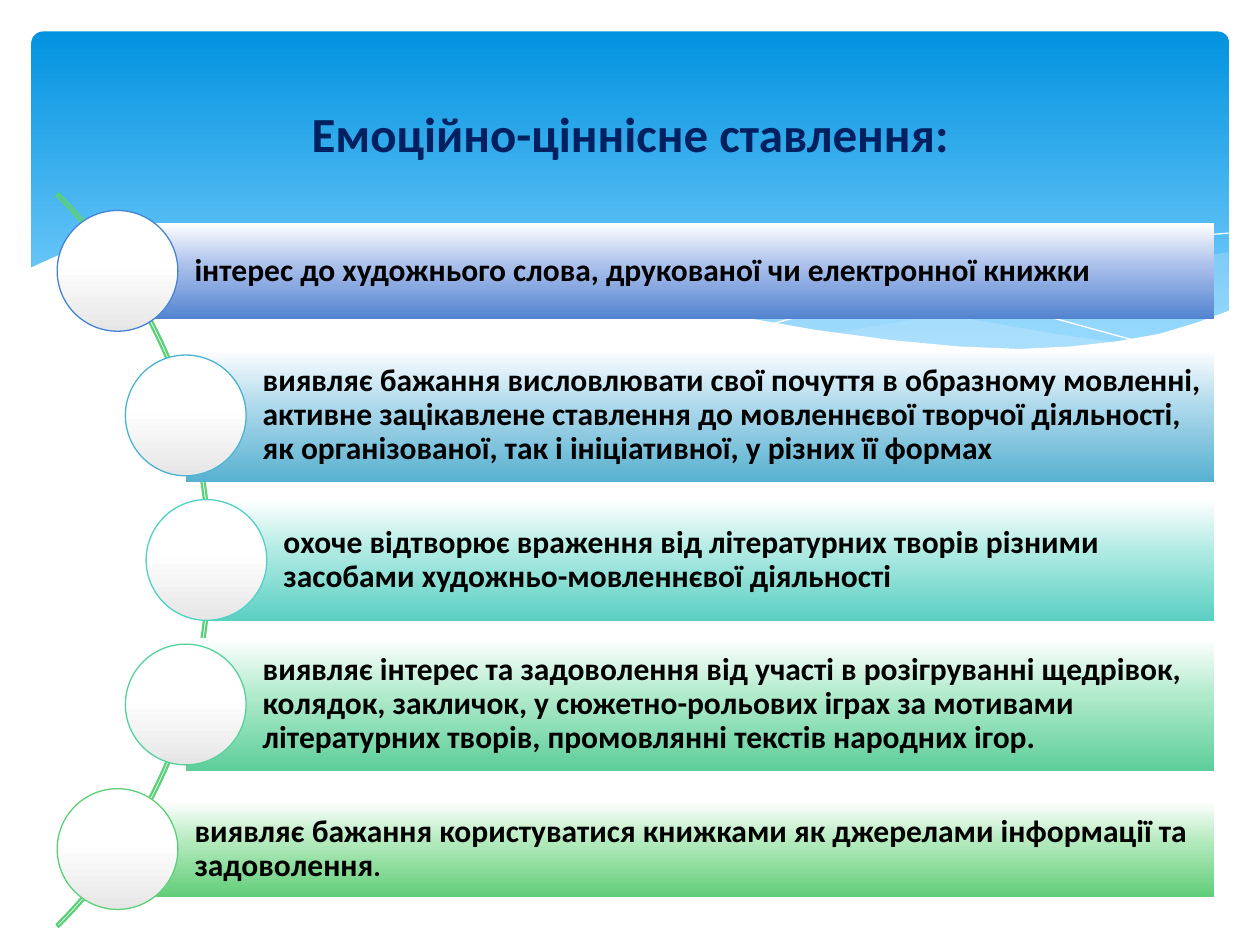
from dataclasses import dataclass
from math import sqrt
from typing import Optional

from lxml.etree import SubElement
from pptx import Presentation
from pptx.dml.color import RGBColor
from pptx.enum.shapes import MSO_SHAPE
from pptx.enum.text import MSO_ANCHOR, PP_ALIGN
from pptx.oxml import parse_xml
from pptx.oxml.ns import nsdecls, qn
from pptx.util import Pt

COLORS = {
    "white": "FFFFFF", "black": "000000", "title": "002060", "wave": "C6E7FC",
    "sky_top": "0293E0", "sky_bottom": "83D3FE", "circle_bottom": "E6E6E6", "arc": "5BD078",
}
FONT = "Calibri"
ARC_X, ARC_Y, ARC_R = -176, 320, 294
STEP, CIRCLE, BAR_RIGHT = 82.6, 69, 694


@dataclass
class Wave:
    points: list
    fill: Optional[str] = None
    opacity: int = 100


@dataclass
class Item:
    text: str
    height: float
    middle: str
    bottom: str
    outline: str
    ending: str = ""


WAVES = [
    Wave([(702, 144), (673, 149), (631, 155.5), (579.6, 170.6), (525, 182), (476, 190.8),
          (507.6, 195), (545, 198.7), (578, 200), (615, 198.7), (646, 194.4), (673, 188.6),
          (702.5, 177.8)], "wave", 29),
    Wave([(643, 196.6), (602.6, 190.8), (558, 183), (508, 172.8), (453, 160), (420.5, 152),
          (380, 144), (335, 137.5), (287, 134), (247.7, 134), (206, 137.5), (246, 143.3),
          (291, 152), (323, 160), (381.6, 172.8), (432.7, 183.6), (479, 191.5), (520, 197),
          (565, 200), (603, 200)], "wave", 40),
    Wave([(222.5, 140.4), (247.7, 136.8), (278.6, 134.6), (311.8, 134.6), (352, 136.8),
          (400, 141.8), (458, 149.8), (500, 157.7), (547, 167.8), (598, 180.7), (653, 195.8)]),
    Wave([(441.4, 185), (483.8, 173.5), (538.6, 160.6), (580, 151), (623.5, 143.3),
          (655, 138), (684.7, 134.6), (702, 133.2)]),
    Wave([(703.4, 177.1), (684, 184.3), (662.4, 190.8), (638.6, 195), (612, 198),
          (582.5, 199.4), (548, 198), (509.8, 194.4), (466.6, 188.6), (417, 180),
          (362, 167.8), (321.8, 158.4), (281.5, 149), (244.8, 141.8), (210, 136.8),
          (180, 134), (139, 132.5), (105, 133.2), (76.3, 136), (54.7, 140.4), (33, 146),
          (16.6, 153.4), (16.6, 236.9), (703.4, 236.9)], "white"),
]

ITEMS = [
    Item("інтерес до художнього слова, друкованої чи електронної книжки",
         54.7, "ABC0EB", "5484D1", "4584D3"),
    Item("виявляє бажання висловлювати свої почуття в образному мовленні, активне зацікавлене "
         "ставлення до мовленнєвої творчої діяльності, як організованої, так і ініціативної, "
         "у різних її формах", 76.3, "ACD8EB", "57B1D0", "4BB3D2"),
    Item("охоче відтворює враження від літературних творів різними засобами "
         "художньо-мовленнєвої діяльності", 69.8, "AEEAE2", "5ACFC2", "50D1C5"),
    Item("виявляє інтерес та задоволення від участі в розігруванні щедрівок, колядок, закличок, "
         "у сюжетно-рольових іграх за мотивами літературних творів, промовлянні текстів "
         "народних ігор.", 75.6, "AFEACB", "5DCE9A", "56D19C"),
    Item("виявляє бажання користуватися книжками як джерелами інформації та задоволення",
         54.7, "B1E9BB", "61CD78", "5BD078", "."),
]


def set_gradient(sp, stops: list) -> None:
    """Fill a shape from top to bottom with (percent, hex) stops."""
    gs = "".join(f'<a:gs pos="{pos * 1000}"><a:srgbClr val="{c}"/></a:gs>' for pos, c in stops)
    geom = sp._element.spPr.find(qn("a:prstGeom"))
    geom.addnext(parse_xml(f'<a:gradFill {nsdecls("a")} rotWithShape="1"><a:gsLst>{gs}</a:gsLst>'
                           '<a:lin ang="5400000" scaled="0"/></a:gradFill>'))


def set_line(sp, color: Optional[str] = None, width: float = 0) -> None:
    """Set the outline, or remove it, and drop the shadow."""
    sp.shadow.inherit = False
    if color is None:
        sp.line.fill.background()
        return
    sp.line.color.rgb = RGBColor.from_string(color)
    sp.line.width = Pt(width)


def add_preset(s, kind, x: float, y: float, w: float, h: float,
               color: Optional[str] = None, width: float = 0):
    """Add a preset shape with the given outline."""
    sp = s.shapes.add_shape(kind, Pt(x), Pt(y), Pt(w), Pt(h))
    set_line(sp, color, width)
    return sp


def draw_wave(s, wave: Wave) -> None:
    """Draw a filled wave or an open white curve."""
    pts = [(Pt(x), Pt(y)) for x, y in wave.points]
    fb = s.shapes.build_freeform(*pts[0])
    fb.add_line_segments(pts[1:], close=wave.fill is not None)
    sp = fb.convert_to_shape()
    if wave.fill is None:
        sp.fill.background()
        set_line(sp, COLORS["white"])
        return
    sp.fill.solid()
    sp.fill.fore_color.rgb = RGBColor.from_string(COLORS[wave.fill])
    set_line(sp)
    if wave.opacity < 100:
        clr = sp._element.spPr.find(qn("a:solidFill")).find(qn("a:srgbClr"))
        SubElement(clr, qn("a:alpha")).set("val", str(wave.opacity * 1000))


def set_text(sp, text: str, size: float, color: str, align):
    """Write one bold paragraph, centred vertically, and return it."""
    tf = sp.text_frame
    tf.word_wrap = True
    tf.vertical_anchor = MSO_ANCHOR.MIDDLE
    p = tf.paragraphs[0]
    p.alignment = align
    p.add_run().text = text
    p.font.name, p.font.size, p.font.bold = FONT, Pt(size), True
    p.font.color.rgb = RGBColor.from_string(color)
    return p


def draw_item(s, item: Item, offset: int) -> None:
    """Draw a bar and its circle, offset in steps from the middle of the arc."""
    white = COLORS["white"]
    x = ARC_X + sqrt(ARC_R ** 2 - (offset * STEP) ** 2)
    y = ARC_Y + offset * STEP
    bar = add_preset(s, MSO_SHAPE.RECTANGLE, x, y - item.height / 2, BAR_RIGHT - x, item.height)
    set_gradient(bar, [(0, white), (44, item.middle), (100, item.bottom)])
    p = set_text(bar, item.text, 18, COLORS["black"], PP_ALIGN.LEFT)
    p.line_spacing = 0.9
    tf = bar.text_frame
    tf.margin_left = Pt(44)
    tf.margin_top = tf.margin_right = tf.margin_bottom = Pt(3.3)
    if item.ending:
        r = p.add_run()
        r.text = item.ending
        r.font.size = Pt(16)
    circle = add_preset(s, MSO_SHAPE.OVAL, x - CIRCLE / 2, y - CIRCLE / 2, CIRCLE, CIRCLE,
                        item.outline, 0.75)
    set_gradient(circle, [(0, white), (44, white), (100, COLORS["circle_bottom"])])


def main() -> None:
    """Build the slide and save it."""
    prs = Presentation()
    prs.slide_width, prs.slide_height = Pt(720), Pt(540)
    s = prs.slides.add_slide(prs.slide_layouts[6])

    sky = add_preset(s, MSO_SHAPE.ROUNDED_RECTANGLE, 18, 18, 684.5, 194.4)
    sky.adjustments[0] = 0.034
    set_gradient(sky, [(0, COLORS["sky_top"]), (90, COLORS["sky_bottom"])])
    for wave in WAVES:
        draw_wave(s, wave)

    arc = add_preset(s, MSO_SHAPE.BLOCK_ARC, -472.3, 23.8, 592.6, 592.6, COLORS["arc"], 1.25)
    arc.fill.background()
    for i, value in enumerate((189, 27, 0.003)):
        arc.adjustments[i] = value
    for i, item in enumerate(ITEMS):
        draw_item(s, item, i - len(ITEMS) // 2)

    title = s.shapes.add_textbox(Pt(36), Pt(26.6), Pt(648), Pt(98.6))
    set_text(title, "Емоційно-ціннісне ставлення:", 28, COLORS["title"], PP_ALIGN.CENTER)
    prs.save("out.pptx")


if __name__ == "__main__":
    main()
